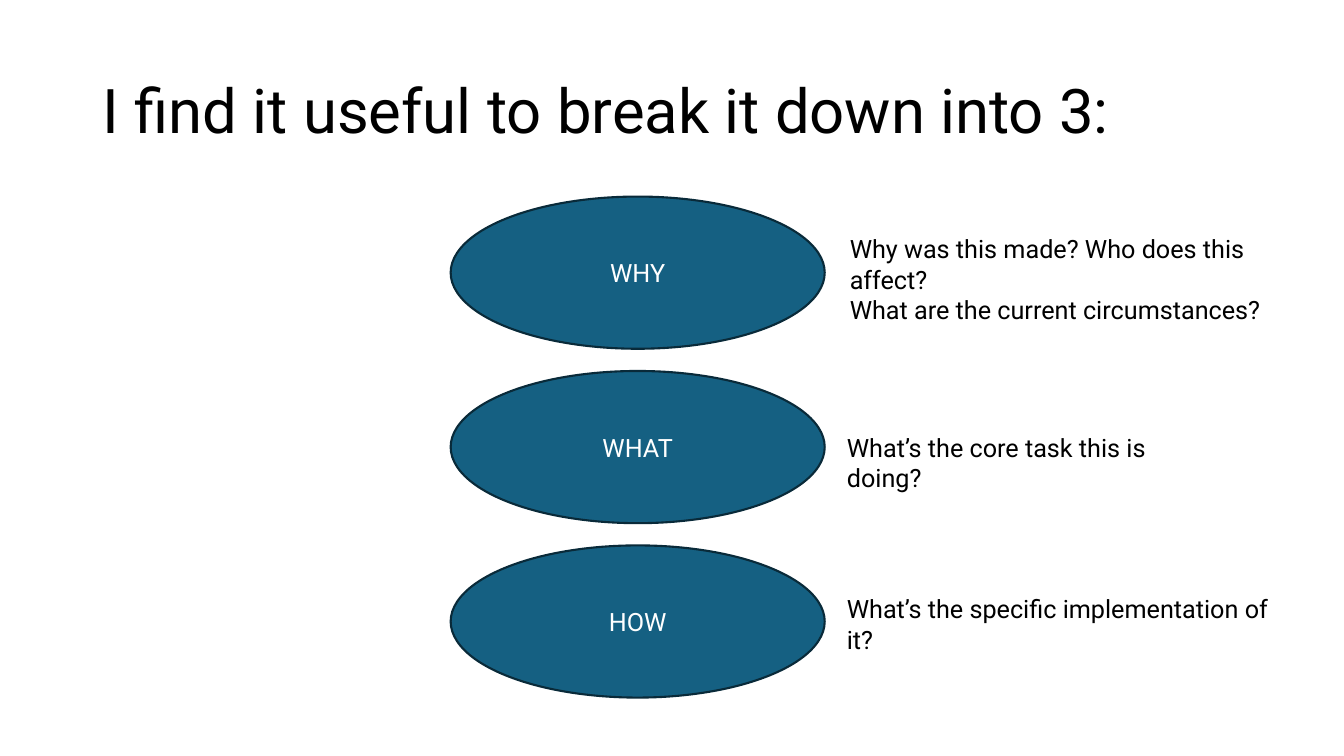
from dataclasses import dataclass

from pptx import Presentation
from pptx.dml.color import RGBColor
from pptx.enum.shapes import MSO_SHAPE
from pptx.enum.text import MSO_ANCHOR, PP_ALIGN
from pptx.util import Inches, Pt

ELLIPSE = MSO_SHAPE.OVAL
MIDDLE, TOP = MSO_ANCHOR.MIDDLE, MSO_ANCHOR.TOP
CENTER, LEFT = PP_ALIGN.CENTER, PP_ALIGN.LEFT


@dataclass(frozen=True)
class Theme:
    font: str = "Roboto"
    ink: str = "000000"
    paper: str = "FFFFFF"
    fill: str = "156082"
    outline: str = "092A39"
    title_size: int = 44
    body_size: int = 18
    outline_width: float = 1.5


class SlideBuilder:
    """Draws styled elements; all lengths are percentages of the slide's size."""

    def __init__(self, deck, theme):
        self.deck = deck
        self.theme = theme
        self.page = deck.slides.add_slide(deck.slide_layouts[6])

    def frame(self, left, top, width, height):
        across, down = self.deck.slide_width / 100, self.deck.slide_height / 100
        return (round(left * across), round(top * down),
                round(width * across), round(height * down))

    def set_text(self, box, lines, size, color, align=LEFT, anchor=TOP, spacing=1.0):
        text = box.text_frame
        text.word_wrap = True
        text.vertical_anchor = anchor
        text.text = "\n".join(lines)
        for para in text.paragraphs:
            para.alignment = align
            para.line_spacing = spacing
            para.font.name = self.theme.font
            para.font.size = Pt(size)
            para.font.color.rgb = RGBColor.from_string(color)

    def title(self, wording, *place):
        box = self.page.shapes.add_textbox(*self.frame(*place))
        self.set_text(box, [wording], self.theme.title_size, self.theme.ink,
                      anchor=MIDDLE, spacing=0.9)

    def note(self, lines, *place):
        box = self.page.shapes.add_textbox(*self.frame(*place))
        self.set_text(box, lines, self.theme.body_size, self.theme.ink)

    def ellipse(self, label, *place):
        shape = self.page.shapes.add_shape(ELLIPSE, *self.frame(*place))
        shape.shadow.inherit = False
        shape.fill.solid()
        shape.fill.fore_color.rgb = RGBColor.from_string(self.theme.fill)
        shape.line.color.rgb = RGBColor.from_string(self.theme.outline)
        shape.line.width = Pt(self.theme.outline_width)
        self.set_text(shape, [label], self.theme.body_size, self.theme.paper,
                      align=CENTER, anchor=MIDDLE)


def main():
    deck = Presentation()
    deck.slide_width, deck.slide_height = Inches(13.33), Inches(7.5)
    slide = SlideBuilder(deck, Theme())
    slide.title("I find it useful to break it down into 3:", 6.9, 5.33, 86.27, 19.33)

    first_top, pitch = 26, 23.07
    questions = [
        ("WHY", ["Why was this made? Who does this affect?",
                 "What are the current circumstances?"], (62.49, 30.27, 36.53, 9.47)),
        ("WHAT", ["What’s the core task this is doing?"], (62.27, 56.53, 29.03, 5.33)),
        ("HOW", ["What’s the specific implementation of it?"],
         (62.27, 77.87, 34.81, 5.33)),
    ]
    for row, (label, lines, place) in enumerate(questions):
        slide.ellipse(label, 33.53, first_top + row * pitch, 27.83, 20.13)
        slide.note(lines, *place)

    deck.save("out.pptx")


if __name__ == "__main__":
    main()
